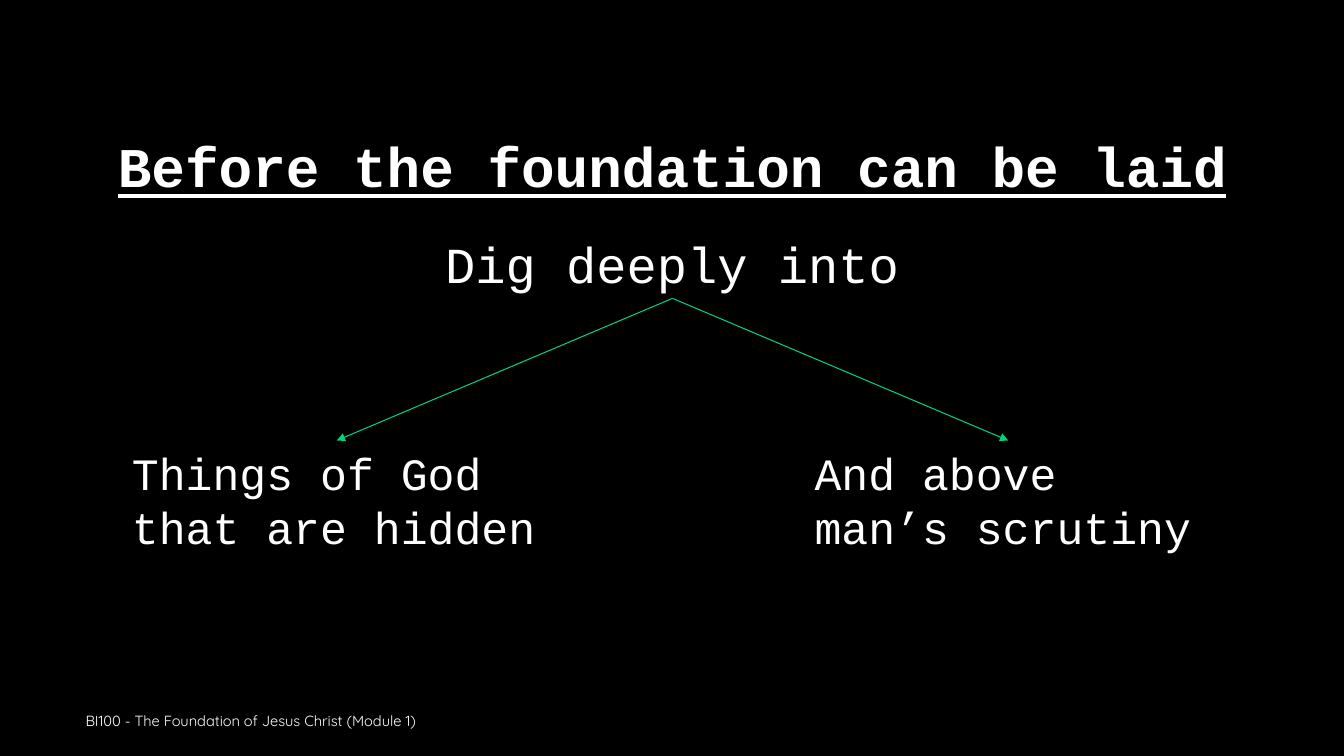
from dataclasses import dataclass

from lxml import etree
from pptx import Presentation
from pptx.dml.color import RGBColor
from pptx.enum.shapes import MSO_CONNECTOR
from pptx.enum.text import MSO_ANCHOR, MSO_AUTO_SIZE, PP_ALIGN
from pptx.oxml.ns import qn
from pptx.util import Inches, Pt

STRAIGHT = MSO_CONNECTOR.STRAIGHT
TOP, MIDDLE = MSO_ANCHOR.TOP, MSO_ANCHOR.MIDDLE
LEFT, CENTER = PP_ALIGN.LEFT, PP_ALIGN.CENTER
FIT_SHAPE, NO_FIT = MSO_AUTO_SIZE.SHAPE_TO_FIT_TEXT, MSO_AUTO_SIZE.NONE

WIDTH, HEIGHT = 13.33, 7.5


@dataclass(frozen=True)
class Theme:
    background: RGBColor = RGBColor(0x00, 0x00, 0x00)
    text: RGBColor = RGBColor(0xFF, 0xFF, 0xFF)
    accent: RGBColor = RGBColor(0x01, 0xD1, 0x7D)
    body_font: str = "Courier New"
    footer_font: str = "Quicksand"
    title_size: float = 40
    lead_size: float = 36
    branch_size: float = 32
    footer_size: float = 10.5
    arrow_width: float = 0.75


class SlideBuilder:
    def __init__(self, page, theme):
        self.page = page
        self.theme = theme

    def background(self):
        fill = self.page.background.fill
        fill.solid()
        fill.fore_color.rgb = self.theme.background

    def text(self, words, bounds, size, font=None, align=LEFT,
             anchor=TOP, fit=FIT_SHAPE, heading=False):
        box = self.page.shapes.add_textbox(*(Inches(value) for value in bounds))
        frame = box.text_frame
        frame.word_wrap = True
        frame.auto_size = fit
        frame.vertical_anchor = anchor
        para = frame.paragraphs[0]
        para.alignment = align
        span = para.add_run()
        span.text = words
        span.font.name = font or self.theme.body_font
        span.font.size = Pt(size)
        span.font.color.rgb = self.theme.text
        if heading:
            span.font.bold = True
            span.font.underline = True

    def arrow(self, start, end):
        points = (Inches(value) for value in (*start, *end))
        connector = self.page.shapes.add_connector(STRAIGHT, *points)
        connector.line.color.rgb = self.theme.accent
        connector.line.width = Pt(self.theme.arrow_width)
        properties = connector.element.spPr
        line = properties.find(qn("a:ln"))
        etree.SubElement(line, qn("a:tailEnd"), type="triangle")
        etree.SubElement(properties, qn("a:effectLst"))


def main():
    deck = Presentation()
    deck.slide_width, deck.slide_height = Inches(WIDTH), Inches(HEIGHT)
    theme = Theme()
    builder = SlideBuilder(deck.slides.add_slide(deck.slide_layouts[6]), theme)
    builder.background()

    # Footer
    builder.text("BI100 - The Foundation of Jesus Christ (Module 1)",
                 (0.75, 6.95, 8.5, 0.4), theme.footer_size,
                 font=theme.footer_font, anchor=MIDDLE, fit=NO_FIT)

    # Title and lead line
    builder.text("Before the foundation can be laid", (0, 1.26, WIDTH, 0.77),
                 theme.title_size, align=CENTER, heading=True)
    builder.text("Dig deeply into", (0, 2.26, WIDTH, 0.71),
                 theme.lead_size, align=CENTER)

    # Two branches, each with an arrow from the lead line
    branch_top = 4.37
    origin = (6.67, 2.96)
    branches = [
        ("Things of God that are hidden", 1.21, 4.25, 3.34),
        ("And above man’s scrutiny", 7.98, 4.05, 10),
    ]
    for words, left, width, target in branches:
        builder.text(words, (left, branch_top, width, 1.18), theme.branch_size)
        builder.arrow(origin, (target, branch_top))

    deck.save("out.pptx")


if __name__ == "__main__":
    main()
